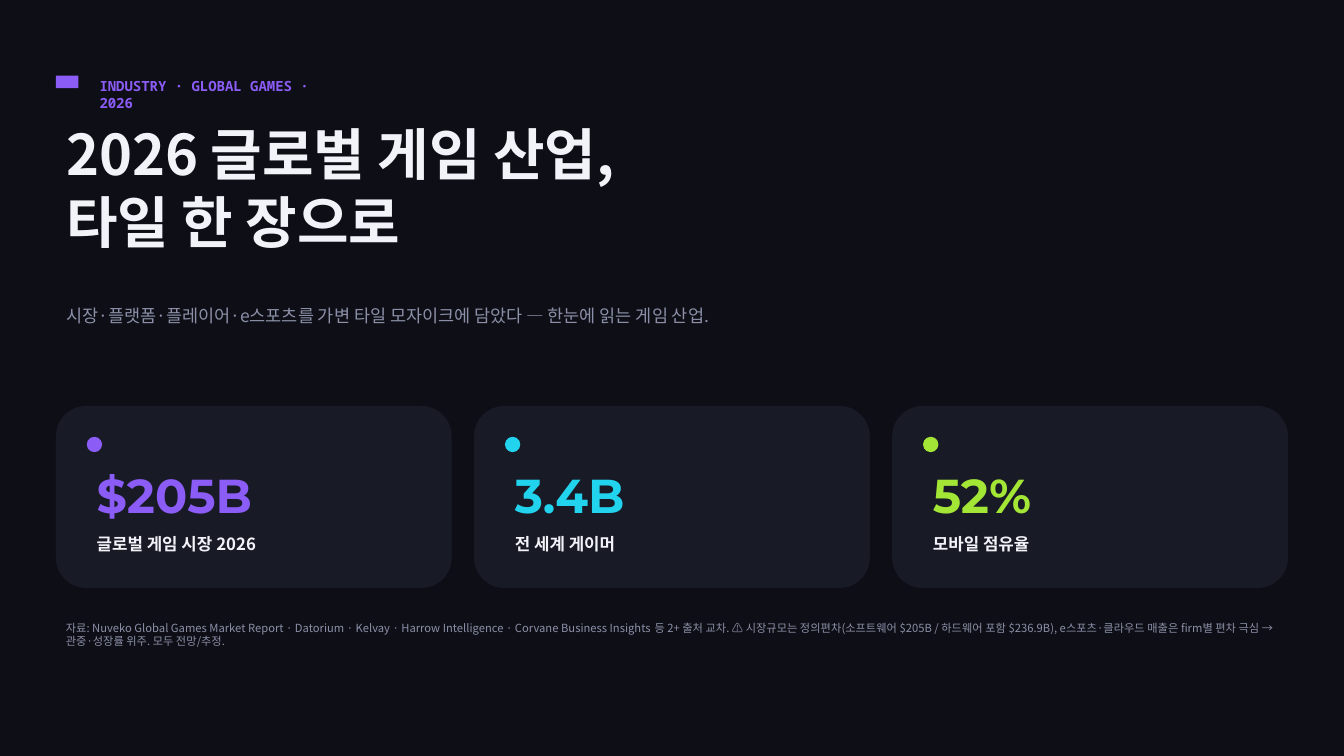
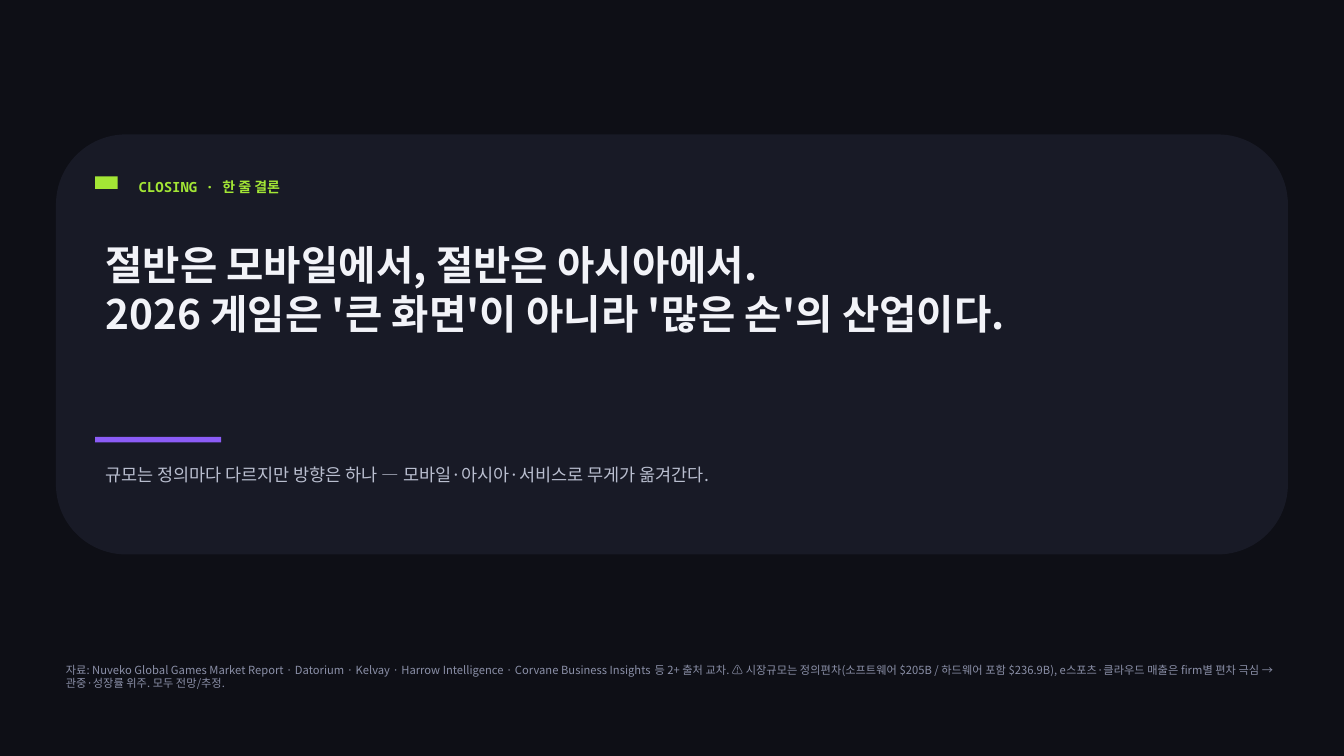
import dataclasses

import lxml.etree
import pptx
import pptx.dml.color
import pptx.enum.shapes
import pptx.enum.text
import pptx.oxml.ns
import pptx.util

Pt = pptx.util.Pt
PRESET = pptx.enum.shapes.MSO_SHAPE


@dataclasses.dataclass(frozen=True)
class Theme:
    background: str = "0E0F16"
    card: str = "181A26"
    bright: str = "F2F3F8"
    soft: str = "B9BECF"
    muted: str = "8B90A8"
    violet: str = "8B5CF6"
    cyan: str = "22D3EE"
    lime: str = "A3E635"
    sans: str = "Noto Sans CJK KR"
    mono: str = "Noto Sans Mono"
    display: str = "Montserrat"
    cover_size: float = 40
    closing_size: float = 29
    figure_size: float = 34
    lead_size: float = 12.5
    label_size: float = 12
    eyebrow_size: float = 10
    source_size: float = 8
    leading: float = 1.2
    margin: float = 40
    content_width: float = 880


THEME = Theme()

SOURCE = (
    "자료: Nuveko Global Games Market Report · Datorium · Kelvay · Harrow Intelligence · "
    "Corvane Business Insights 등 2+ 출처 교차. ⚠ 시장규모는 정의편차(소프트웨어 $205B / "
    "하드웨어 포함 $236.9B), e스포츠·클라우드 매출은 firm별 편차 극심 → 관중·성장률 위주. "
    "모두 전망/추정."
)

METRICS = [
    ("$205B", "글로벌 게임 시장 2026", THEME.violet),
    ("3.4B", "전 세계 게이머", THEME.cyan),
    ("52%", "모바일 점유율", THEME.lime),
]


def rgb(color):
    return pptx.dml.color.RGBColor.from_string(color)


def write_text(box, text, *, size, color, font=THEME.sans, bold=False):
    frame = box.text_frame
    frame.word_wrap = True
    frame.auto_size = pptx.enum.text.MSO_AUTO_SIZE.NONE
    frame.vertical_anchor = pptx.enum.text.MSO_ANCHOR.TOP
    for index, line in enumerate(text.split("\n")):
        para = frame.add_paragraph() if index else frame.paragraphs[0]
        para.alignment = pptx.enum.text.PP_ALIGN.LEFT
        para.space_before = Pt(0)
        para.line_spacing = Pt(size * THEME.leading)
        span = para.add_run()
        span.text = line
        span.font.size = Pt(size)
        span.font.bold = bold
        span.font.color.rgb = rgb(color)
        span.font.name = font
        east_asian = lxml.etree.SubElement(
            span.font._element, pptx.oxml.ns.qn("a:ea")
        )
        east_asian.set("typeface", THEME.sans)


def add_text(page, text, left, top, width, height, **style):
    box = page.shapes.add_textbox(Pt(left), Pt(top), Pt(width), Pt(height))
    write_text(box, text, **style)


def fill_placeholder(box, text, left, top, width, height, **style):
    box.left, box.top, box.width, box.height = map(Pt, (left, top, width, height))
    box.element.getparent().append(box.element)
    write_text(box, text, **style)


def add_block(page, preset, left, top, width, height, color):
    block = page.shapes.add_shape(preset, Pt(left), Pt(top), Pt(width), Pt(height))
    block.shadow.inherit = False
    block.fill.solid()
    block.fill.fore_color.rgb = rgb(color)
    block.line.fill.background()


def add_eyebrow(page, text, left, top, color):
    add_block(page, PRESET.RECTANGLE, left, top, 16, 9, color)
    add_text(page, text, left + 24, top - 2, 181, 19.5, size=THEME.eyebrow_size,
             color=color, font=THEME.mono, bold=True)


def add_source(page, top):
    add_text(page, SOURCE, THEME.margin, top, THEME.content_width, 27,
             size=THEME.source_size, color=THEME.muted)


def add_metric(page, left, top, width, height, figure, label, color):
    inner_left, inner_width = left + 22, width - 44
    add_block(page, PRESET.ROUNDED_RECTANGLE, left, top, width, height, THEME.card)
    add_block(page, PRESET.OVAL, inner_left, top + 22, 11, 11, color)
    add_text(page, figure, inner_left, top + 39.5, inner_width, 48,
             size=THEME.figure_size, color=color, font=THEME.display, bold=True)
    add_text(page, label, inner_left, top + 88, inner_width, 22,
             size=THEME.label_size, color=THEME.bright, bold=True)


def add_metric_row(page, left, top, width, height, gap=16):
    card_width = (width - gap * (len(METRICS) - 1)) / len(METRICS)
    for index, metric in enumerate(METRICS):
        card_left = left + index * (card_width + gap)
        add_metric(page, card_left, top, card_width, height, *metric)


def add_page(deck):
    return deck.slides.add_slide(deck.slide_layouts[0])


def build_cover(deck):
    page = add_page(deck)
    left, width = THEME.margin, THEME.content_width
    add_eyebrow(page, "INDUSTRY · GLOBAL GAMES · 2026", left, 54, THEME.violet)
    fill_placeholder(page.shapes.title, "2026 글로벌 게임 산업,\n타일 한 장으로",
                     left, 82, width, 104.5, size=THEME.cover_size,
                     color=THEME.bright, bold=True)
    fill_placeholder(page.placeholders[1],
                     "시장·플랫폼·플레이어·e스포츠를 가변 타일 모자이크에 담았다 — "
                     "한눈에 읽는 게임 산업.",
                     left, 214, 720, 22.5, size=THEME.lead_size, color=THEME.muted)
    add_metric_row(page, left, 290, width, 130)
    add_source(page, 440)


def add_conclusion(page, left, top, width, height):
    inner_left, inner_width = left + 28, width - 56
    add_block(page, PRESET.ROUNDED_RECTANGLE, left, top, width, height, THEME.card)
    add_eyebrow(page, "CLOSING · 한 줄 결론", inner_left, top + 30, THEME.lime)
    fill_placeholder(page.shapes.title,
                     "절반은 모바일에서, 절반은 아시아에서.\n"
                     "2026 게임은 '큰 화면'이 아니라 '많은 손'의 산업이다.",
                     inner_left, top + 72, inner_width, 78, size=THEME.closing_size,
                     color=THEME.bright, bold=True)
    add_block(page, PRESET.RECTANGLE, inner_left, top + 216, 90, 4, THEME.violet)
    fill_placeholder(page.placeholders[1],
                     "규모는 정의마다 다르지만 방향은 하나 — "
                     "모바일·아시아·서비스로 무게가 옮겨간다.",
                     inner_left, top + 232, inner_width, 22.5,
                     size=THEME.lead_size, color=THEME.soft)


def build_closing(deck):
    page = add_page(deck)
    add_conclusion(page, THEME.margin, 96, THEME.content_width, 300)
    add_source(page, 470)


def main():
    deck = pptx.Presentation()
    deck.slide_width, deck.slide_height = Pt(960), Pt(540)
    background = deck.slide_master.background.fill
    background.solid()
    background.fore_color.rgb = rgb(THEME.background)
    build_cover(deck)
    build_closing(deck)
    deck.save("out.pptx")


if __name__ == "__main__":
    main()
